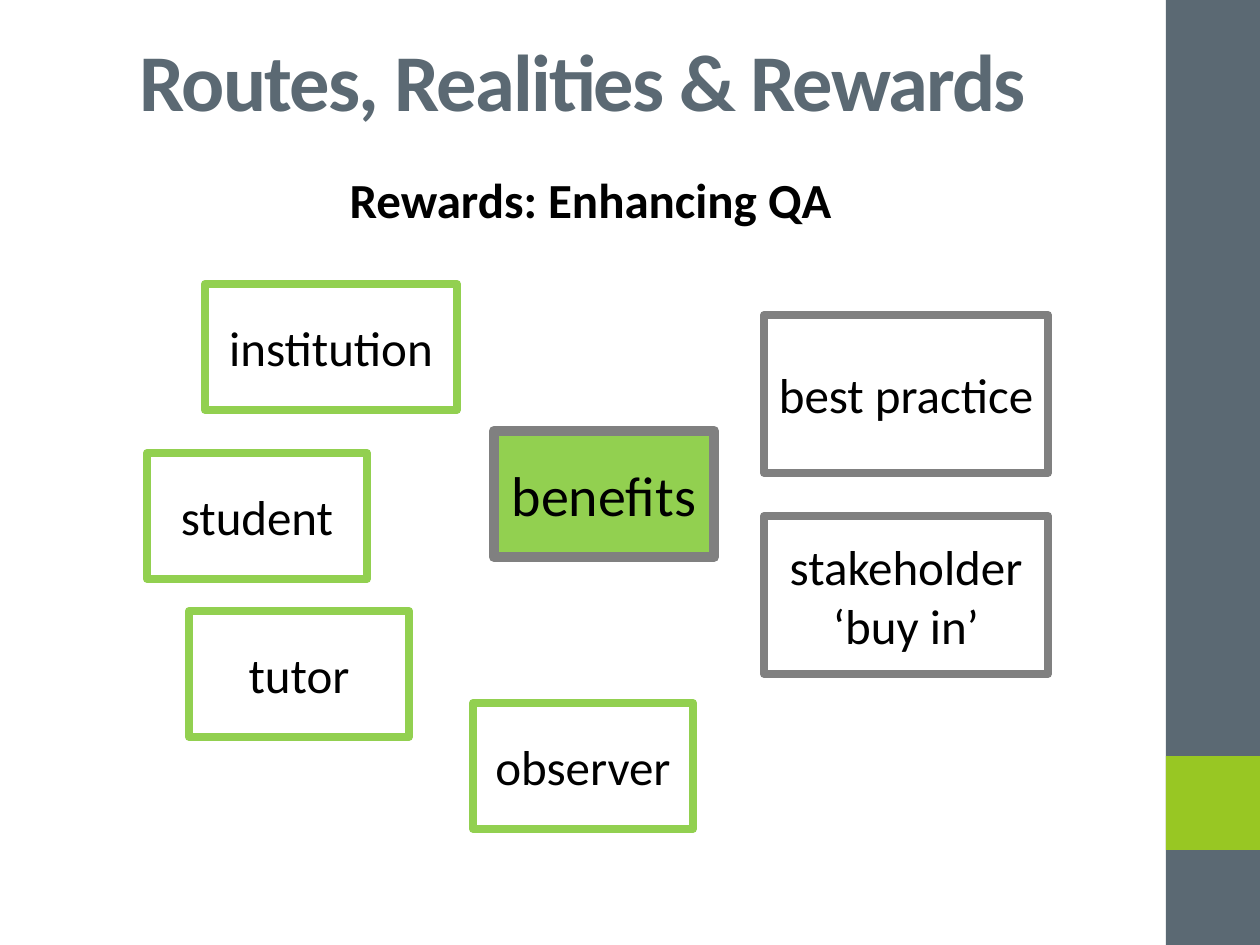
import pptx
import pptx.dml.color
import pptx.enum.shapes
import pptx.enum.text
import pptx.util

RGB = pptx.dml.color.RGBColor
SLATE = RGB(0x5B, 0x69, 0x73)
LIME = RGB(0x98, 0xC7, 0x23)
GREEN = RGB(0x92, 0xD0, 0x50)
GRAY = RGB(0x80, 0x80, 0x80)
WHITE = RGB(0xFF, 0xFF, 0xFF)
BLACK = RGB(0x00, 0x00, 0x00)

PX = pptx.util.Inches(1) // 126
SLIDE_SIZE = (1260, 945)

TITLE = "Routes, Realities & Rewards"
TITLE_BOX = (58, 0, 1050, 158)
SUBTITLE = "Rewards: Enhancing QA"
SUBTITLE_BOX = (58, 163, 1050, 661)
SUBTITLE_INDENT = 15

SIDEBAR = [((1166, 0, 94, 945), SLATE), ((1166, 756, 94, 94), LIME)]

# text, (left, top), kind of box
BOXES = [
    ("benefits", (494, 431), "hub"),
    ("observer", (473, 703), "person"),
    ("tutor", (189, 611), "person"),
    ("student", (147, 453), "person"),
    ("best practice", (764, 315), "outcome"),
    ("stakeholder ‘buy in’", (764, 516), "outcome"),
    ("institution", (205, 284), "organisation"),
]
# size, fill, line colour, line points, text points
KINDS = {
    "hub": ((220, 126), GREEN, GRAY, 6, 32),
    "person": ((220, 126), WHITE, GREEN, 4.5, 28),
    "organisation": ((252, 126), WHITE, GREEN, 4.5, 28),
    "outcome": ((284, 158), None, GRAY, 4.5, 28),
}


def emu(box):
    return [value * PX for value in box]


def write(shape, text, anchor, **font_format):
    frame = shape.text_frame
    frame.word_wrap = True
    frame.auto_size = pptx.enum.text.MSO_AUTO_SIZE.NONE
    frame.vertical_anchor = anchor
    paragraph = frame.paragraphs[0]
    paragraph.alignment = pptx.enum.text.PP_ALIGN.CENTER
    run = paragraph.add_run()
    run.text = text
    color = font_format.pop("color", BLACK)
    for name, value in {"name": "Calibri", **font_format}.items():
        setattr(run.font, name, value)
    run.font.color.rgb = color
    return run


def add_rectangle(slide, box, fill):
    shape = slide.shapes.add_shape(pptx.enum.shapes.MSO_SHAPE.RECTANGLE, *emu(box))
    shape.shadow.inherit = False
    if fill is None:
        shape.fill.background()
    else:
        shape.fill.solid()
        shape.fill.fore_color.rgb = fill
    shape.line.fill.background()
    return shape


def main():
    presentation = pptx.Presentation()
    presentation.slide_width, presentation.slide_height = emu(SLIDE_SIZE)
    slide = presentation.slides.add_slide(presentation.slide_layouts.get_by_name("Title Only"))
    middle = pptx.enum.text.MSO_ANCHOR.MIDDLE

    for box, color in SIDEBAR:
        add_rectangle(slide, box, color)

    title = slide.shapes.title
    title.left, title.top, title.width, title.height = emu(TITLE_BOX)
    title_run = write(title, TITLE, middle, size=pptx.util.Pt(46), bold=True, color=SLATE)
    title_run.font._element.set("spc", "-100")

    subtitle = slide.shapes.add_textbox(*emu(SUBTITLE_BOX))
    write(subtitle, SUBTITLE, pptx.enum.text.MSO_ANCHOR.TOP, size=pptx.util.Pt(28), bold=True)
    properties = subtitle.text_frame.paragraphs[0]._p.get_or_add_pPr()
    properties.set("marL", str(SUBTITLE_INDENT * PX))

    for text, position, kind in BOXES:
        size, fill, line_color, line_points, text_points = KINDS[kind]
        shape = add_rectangle(slide, position + size, fill)
        shape.line.color.rgb = line_color
        shape.line.width = pptx.util.Pt(line_points)
        write(shape, text, middle, size=pptx.util.Pt(text_points))

    presentation.save("out.pptx")


if __name__ == "__main__":
    main()
